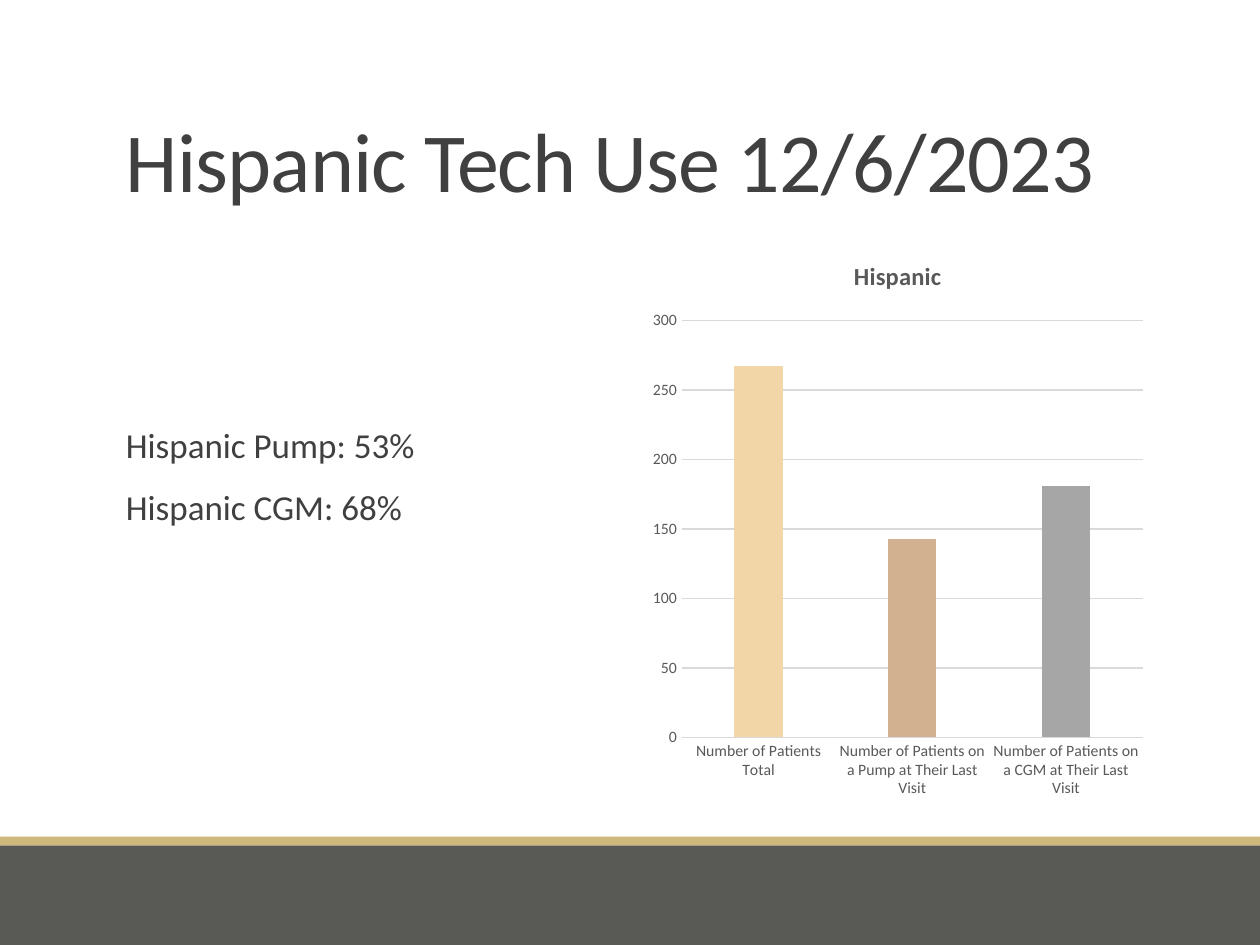
from pptx import Presentation
from pptx.chart.data import CategoryChartData
from pptx.dml.color import RGBColor
from pptx.enum.chart import XL_CHART_TYPE, XL_TICK_MARK
from pptx.enum.shapes import MSO_SHAPE
from pptx.enum.text import MSO_ANCHOR
from pptx.util import Inches, Pt

FONT = "Calibri"
TEXT = RGBColor(0x40, 0x40, 0x40)
CHART_TEXT = RGBColor(0x59, 0x59, 0x59)
GRID = RGBColor(0xD9, 0xD9, 0xD9)
FOOTER = RGBColor(0x59, 0x59, 0x55)
GOLD = RGBColor(0xCF, 0xB8, 0x7C)
SAND = RGBColor(0xF3, 0xD6, 0xA8)
TAN = RGBColor(0xD2, 0xB1, 0x91)
GREY = RGBColor(0xA6, 0xA6, 0xA6)

presentation = Presentation()
presentation.slide_width = Inches(10)
presentation.slide_height = Inches(7.5)
slide = presentation.slides.add_slide(presentation.slide_layouts[6])

# Two equal columns share one content row
LEFT, GAP = Inches(0.9), Inches(0.15)
COLUMN = Inches(4.05)
ROW_TOP, ROW_HEIGHT = Inches(1.88), Inches(4.54)


def style_font(font, size, color):
    font.name = FONT
    font.size = Pt(size)
    font.color.rgb = color


# Footer bands
for top, height, color in ((6.71, 0.79, FOOTER), (6.64, 0.07, GOLD)):
    band = slide.shapes.add_shape(
        MSO_SHAPE.RECTANGLE, 0, Inches(top), presentation.slide_width, Inches(height))
    band.shadow.inherit = False
    band.fill.solid()
    band.fill.fore_color.rgb = color
    band.line.fill.background()

# Title
title = slide.shapes.add_textbox(LEFT, Inches(0.31), 2 * COLUMN + GAP, Inches(1.4))
title_frame = title.text_frame
title_frame.word_wrap = True
title_frame.vertical_anchor = MSO_ANCHOR.BOTTOM
title_frame.text = "Hispanic Tech Use 12/6/2023"
title_paragraph = title_frame.paragraphs[0]
title_paragraph.line_spacing = 0.85
title_run = title_paragraph.runs[0]
style_font(title_run.font, 48, TEXT)
title_run.font._element.set("spc", "-50")

# Percentages, lowered to the middle of the left column
rates = slide.shapes.add_textbox(LEFT, ROW_TOP, COLUMN, ROW_HEIGHT)
rates_frame = rates.text_frame
rates_frame.word_wrap = True
rates_frame.margin_left = Inches(0.1)
rates_frame.margin_right = 0
rates_frame.margin_top = Inches(1.52)
rates_frame.text = "Hispanic Pump: 53%\nHispanic CGM: 68%"
for index, paragraph in enumerate(rates_frame.paragraphs):
    paragraph.line_spacing = 0.9
    paragraph.space_before = Pt(12 if index else 0)
    paragraph.space_after = Pt(2)
    style_font(paragraph.runs[0].font, 20, TEXT)

# Column chart
chart_data = CategoryChartData()
chart_data.categories = [
    "Number of Patients Total",
    "Number of Patients on a Pump at Their Last Visit",
    "Number of Patients on a CGM at Their Last Visit",
]
chart_data.add_series("Hispanic", (267, 143, 181))
chart = slide.shapes.add_chart(
    XL_CHART_TYPE.COLUMN_CLUSTERED, LEFT + COLUMN + GAP, ROW_TOP,
    COLUMN, ROW_HEIGHT, chart_data).chart
style_font(chart.font, 10, RGBColor(0, 0, 0))
chart.has_legend = False
chart.has_title = True
chart.chart_title.include_in_layout = False
chart.chart_title.text_frame.text = "Hispanic"
chart_title_font = chart.chart_title.text_frame.paragraphs[0].runs[0].font
style_font(chart_title_font, 14, CHART_TEXT)
chart_title_font.bold = True

for axis in (chart.category_axis, chart.value_axis):
    axis.major_tick_mark = XL_TICK_MARK.NONE
    axis.minor_tick_mark = XL_TICK_MARK.NONE
    style_font(axis.tick_labels.font, 9, CHART_TEXT)
chart.value_axis.minimum_scale = 0
chart.value_axis.maximum_scale = 300
chart.value_axis.major_unit = 50
chart.value_axis.format.line.fill.background()
for line in (chart.category_axis.format.line, chart.value_axis.major_gridlines.format.line):
    line.color.rgb = GRID
    line.width = Pt(0.75)

plot = chart.plots[0]
plot.gap_width = 219
plot.overlap = -27
plot.vary_by_categories = False
series = plot.series[0]
series.format.fill.solid()
series.format.fill.fore_color.rgb = SAND
for index, color in enumerate((SAND, TAN, GREY)):
    fill = series.points[index].format.fill
    fill.solid()
    fill.fore_color.rgb = color

presentation.save("out.pptx")
